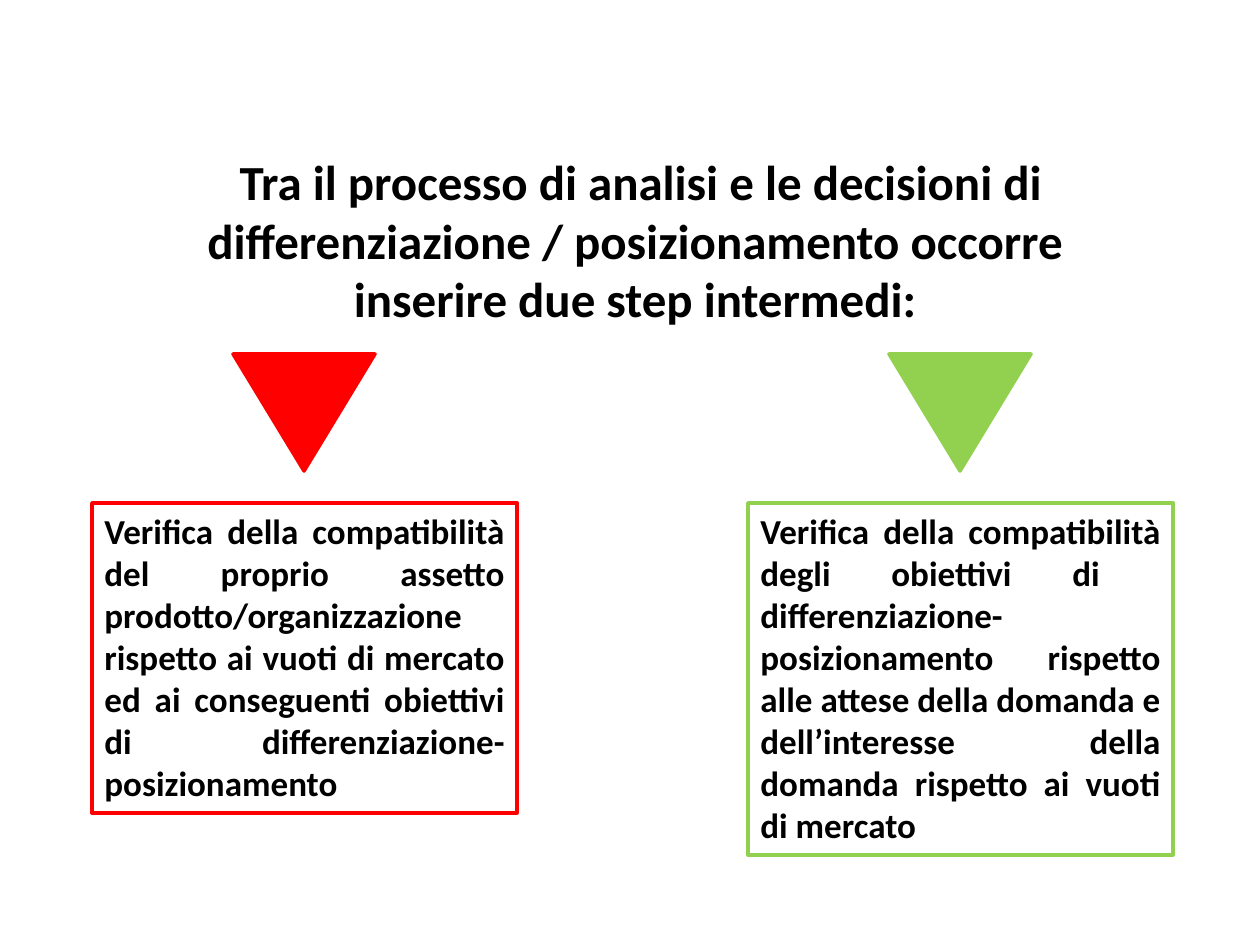
from pptx import Presentation
from pptx.dml.color import RGBColor
from pptx.enum.shapes import MSO_SHAPE
from pptx.enum.text import MSO_ANCHOR, MSO_AUTO_SIZE, PP_ALIGN as Align
from pptx.util import Pt

PX = 914400 / 126
COLORS = {"text": "000000", "red": "FF0000", "green": "92D050", "white": "FFFFFF"}


def px(*lengths):
    return [round(length * PX) for length in lengths]


def write(shape, text, size, alignment):
    frame = shape.text_frame
    frame.text = text
    frame_format = {"word_wrap": True, "auto_size": MSO_AUTO_SIZE.NONE,
                    "vertical_anchor": MSO_ANCHOR.TOP}
    for name, value in frame_format.items():
        setattr(frame, name, value)
    paragraph = frame.paragraphs[0]
    paragraph.alignment = alignment
    font_format = {"name": "Calibri", "size": Pt(size), "bold": True}
    for run in paragraph.runs:
        for name, value in font_format.items():
            setattr(run.font, name, value)
        run.font.color.rgb = RGBColor.from_string(COLORS["text"])


presentation = Presentation()
presentation.slide_width, presentation.slide_height = px(1260, 945)
slide = presentation.slides.add_slide(presentation.slide_layouts[5])

# Title
title = slide.shapes.title
title.left, title.top, title.width, title.height = px(123, 145, 1024, 251)
write(title, " Tra il processo di analisi e le decisioni di differenziazione / "
      "posizionamento occorre inserire due step intermedi:", 28, Align.CENTER)

# The two steps: a framed text with a triangle centred above it
BOX_WIDTH, TRIANGLE_WIDTH = 425, 142
steps = [
    (92, 310, "red", "Verifica della compatibilità del proprio assetto "
     "prodotto/organizzazione rispetto ai vuoti di mercato ed ai conseguenti "
     "obiettivi di differenziazione-posizionamento"),
    (748, 352, "green", "Verifica della compatibilità degli obiettivi di  "
     "differenziazione-posizionamento rispetto alle attese della domanda e "
     "dell’interesse della domanda rispetto ai vuoti di mercato"),
]
for left, height, color, text in steps:
    box = slide.shapes.add_shape(
        MSO_SHAPE.RECTANGLE, *px(left, 503, BOX_WIDTH, height))
    write(box, text, 20, Align.JUSTIFY)
    triangle_left = left + (BOX_WIDTH - TRIANGLE_WIDTH) // 2
    triangle = slide.shapes.add_shape(
        MSO_SHAPE.ISOSCELES_TRIANGLE, *px(triangle_left, 354, TRIANGLE_WIDTH, 117))
    triangle.rotation = 180
    for shape, fill in ((box, "white"), (triangle, color)):
        shape.shadow.inherit = False
        shape.fill.solid()
        shape.fill.fore_color.rgb = RGBColor.from_string(COLORS[fill])
        shape.line.color.rgb = RGBColor.from_string(COLORS[color])
        shape.line.width = Pt(2)

presentation.save("out.pptx")
